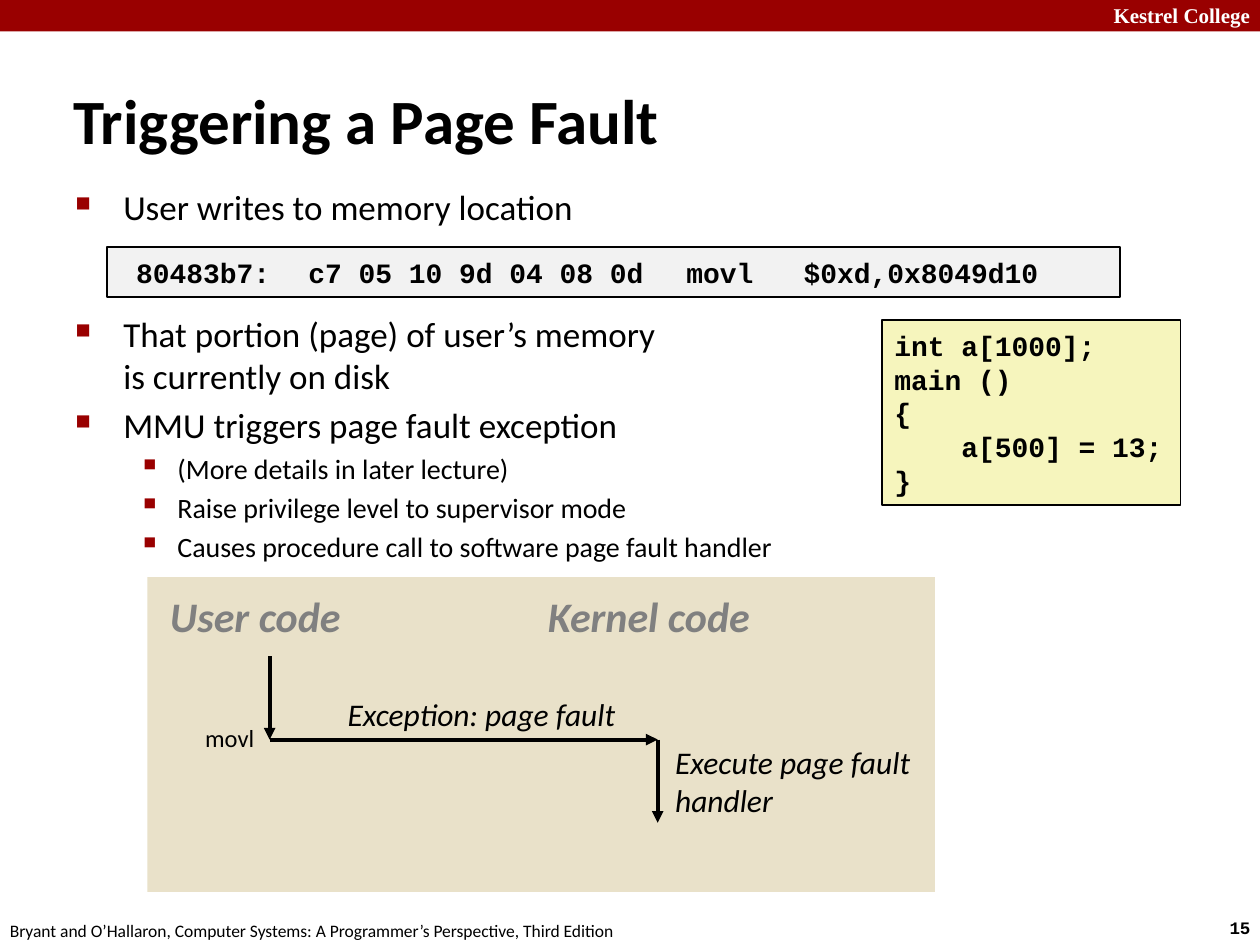
from typing import NamedTuple

from lxml import etree
from pptx import Presentation
from pptx.dml.color import RGBColor
from pptx.enum import shapes as es, text as et
from pptx.oxml.ns import qn
from pptx.util import Inches, Pt

BLACK, WHITE, RED, GREY = "000000", "FFFFFF", "990000", "808080"
SANS, MONO, SERIF = "Calibri", "Courier New", "Times New Roman"


class Label(NamedTuple):
    text: str
    box: tuple
    form: dict
    wrap: bool = False
    align: et.PP_ALIGN = et.PP_ALIGN.LEFT


class Level(NamedTuple):
    size: int
    mark: str
    scale: int
    left: float
    hang: float
    gap: float


class Bullet(NamedTuple):
    text: str
    level: Level
    gap: float | None = None


def form(size: int, name: str = SANS, color: str = BLACK, **more) -> dict:
    return {"size": Pt(size), "name": name, "color": color, **more}


def paint(target, color: str) -> None:
    target.rgb = RGBColor.from_string(color)


def style(par, look: dict) -> None:
    for run in par.runs:
        for key, value in look.items():
            if key == "color":
                paint(run.font.color, value)
            else:
                setattr(run.font, key, value)


def write(shape, lines: list, look: dict, wrap: bool, align=et.PP_ALIGN.LEFT) -> None:
    frame = shape.text_frame
    frame.word_wrap = wrap
    for i, line in enumerate(lines):
        par = frame.paragraphs[0] if i == 0 else frame.add_paragraph()
        par.text = line
        par.alignment = align
        style(par, look)


def put_label(slide, label: Label) -> None:
    box = slide.shapes.add_textbox(*map(Inches, label.box))
    write(box, [label.text], label.form, label.wrap, label.align)


def put_panel(slide, box: tuple, fill: str, line: str | None = None):
    panel = slide.shapes.add_shape(es.MSO_SHAPE.RECTANGLE, *map(Inches, box))
    panel.shadow.inherit = False
    panel.fill.solid()
    paint(panel.fill.fore_color, fill)
    if line:
        paint(panel.line.color, line)
        panel.line.width = Pt(1)
    else:
        panel.line.fill.background()
    return panel


def put_code(slide, box: tuple, fill: str, lines: list) -> None:
    panel = put_panel(slide, box, fill, BLACK)
    write(panel, lines, form(16, MONO, bold=True), wrap=False)


def put_arrow(slide, start: tuple, end: tuple) -> None:
    arrow = slide.shapes.add_connector(
        es.MSO_CONNECTOR.STRAIGHT, *map(Inches, start + end))
    paint(arrow.line.color, BLACK)
    arrow.line.width = Pt(2.25)
    etree.SubElement(arrow.line._get_or_add_ln(), qn("a:tailEnd"), type="triangle")
    etree.SubElement(arrow._element.spPr, qn("a:effectLst"))


def add_mark(par, level: Level) -> None:
    """Give the paragraph its hanging red bullet."""
    props = par._p.get_or_add_pPr()
    props.set("marL", str(Inches(level.left)))
    props.set("indent", str(-Inches(level.hang)))
    color = etree.SubElement(props, qn("a:buClr"))
    etree.SubElement(color, qn("a:srgbClr"), val=RED)
    etree.SubElement(props, qn("a:buSzPct"), val=str(level.scale * 1000))
    etree.SubElement(props, qn("a:buChar"), char=level.mark)


def put_list(slide, box: tuple, items: list) -> None:
    frame = slide.shapes.add_textbox(*map(Inches, box)).text_frame
    frame.word_wrap = True
    for i, item in enumerate(items):
        par = frame.paragraphs[0] if i == 0 else frame.add_paragraph()
        par.text = item.text
        par.space_before = Pt(item.level.gap if item.gap is None else item.gap)
        style(par, form(item.level.size))
        add_mark(par, item.level)


MAIN = Level(20, "■", 60, 0.38, 0.38, 4)
SUB = Level(16, "▪", 110, 0.81, 0.31, 3.2)
BULLETS = [
    Bullet("User writes to memory location", MAIN, 0),
    Bullet("That portion (page) of user’s memory \vis currently on disk", MAIN, 49),
    Bullet("MMU triggers page fault exception", MAIN),
    Bullet("(More details in later lecture)", SUB),
    Bullet("Raise privilege level to supervisor mode", SUB),
    Bullet("Causes procedure call to software page fault handler", SUB),
]

HEAD = form(24, color=GREY, bold=True, italic=True)
NOTE = form(18, italic=True)
FRAME_LABELS = [
    Label("Kestrel College", (8.64, -0.03, 1.38, 0.3),
          form(12, SERIF, WHITE, bold=True), True, et.PP_ALIGN.RIGHT),
    Label("15", (9.66, 7.23, 0.45, 0.27), form(10, MONO, bold=True)),
    Label("Bryant and O’Hallaron, Computer Systems: A Programmer’s Perspective, "
          "Third Edition", (-0.02, 7.25, 5.08, 0.27), form(10)),
]
FLOW_LABELS = [
    Label("User code", (1.25, 4.64, 1.65, 0.5), HEAD),
    Label("Kernel code", (4.25, 4.64, 1.91, 0.5), HEAD),
    Label("Exception: page fault", (2.66, 5.47, 2.42, 0.4), NOTE),
    Label("Execute page fault handler", (5.26, 5.85, 2.16, 0.7), NOTE, True),
    Label("movl", (1.53, 5.69, 0.6, 0.34), form(14)),
]
FLOW = [(2.14, 5.21), (2.14, 5.87), (5.22, 5.87), (5.22, 6.53)]
SOURCE = ["int a[1000];", "main ()", "{", "    a[500] = 13;", "}"]
ASSEMBLY = [" 80483b7:\tc7 05 10 9d 04 08 0d \tmovl   $0xd,0x8049d10"]


def main() -> None:
    deck = Presentation()
    deck.slide_width, deck.slide_height = Inches(10), Inches(7.5)
    slide = deck.slides.add_slide(deck.slide_layouts[5])

    put_panel(slide, (0, 0, 10, 0.25), RED)
    for label in FRAME_LABELS:
        put_label(slide, label)

    title = slide.shapes.title
    title.left, title.top, title.width, title.height = map(
        Inches, (0.48, 0.64, 8.63, 0.61))
    title.text_frame.vertical_anchor = et.MSO_ANCHOR.MIDDLE
    write(title, ["Triggering a Page Fault"], form(36, bold=True), wrap=True)

    put_list(slide, (0.5, 1.42, 8.92, 3.1), BULLETS)
    put_code(slide, (7, 2.54, 2.37, 1.47), "F6F5BD", SOURCE)
    put_code(slide, (0.85, 1.96, 8.04, 0.4), "F2F2F2", ASSEMBLY)

    put_panel(slide, (1.17, 4.58, 6.25, 2.5), "E9E1C9")
    for start, end in zip(FLOW, FLOW[1:]):
        put_arrow(slide, start, end)
    for label in FLOW_LABELS:
        put_label(slide, label)

    deck.save("out.pptx")


if __name__ == "__main__":
    main()
